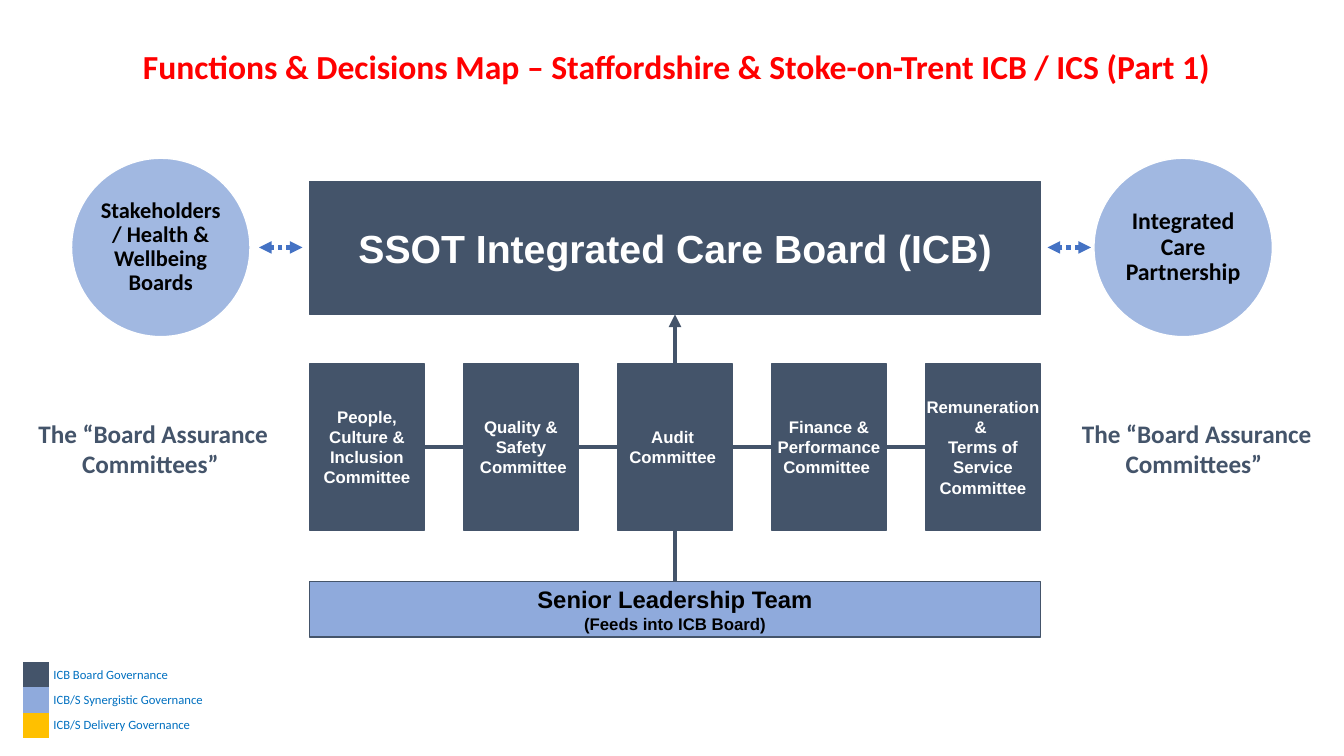
from lxml import etree
from pptx import Presentation
from pptx.dml.color import RGBColor
from pptx.enum.dml import MSO_LINE
from pptx.enum.shapes import MSO_CONNECTOR, MSO_SHAPE
from pptx.enum.text import MSO_ANCHOR, PP_ALIGN
from pptx.oxml.ns import qn
from pptx.util import Inches, Pt

RECT, OVAL = MSO_SHAPE.RECTANGLE, MSO_SHAPE.OVAL
STRAIGHT, DOTTED = MSO_CONNECTOR.STRAIGHT, MSO_LINE.ROUND_DOT
MIDDLE, CENTER, LEFT = MSO_ANCHOR.MIDDLE, PP_ALIGN.CENTER, PP_ALIGN.LEFT
TOP_SIDE, LEFT_SIDE, BOTTOM_SIDE, RIGHT_SIDE = range(4)

SLATE = RGBColor(0x44, 0x54, 0x6A)
BLUE = RGBColor(0x44, 0x72, 0xC4)
PALE_BLUE = RGBColor(0x8F, 0xAA, 0xDC)
AMBER = RGBColor(0xFF, 0xC0, 0x00)
RED = RGBColor(0xFF, 0x00, 0x00)
LEGEND_BLUE = RGBColor(0x00, 0x70, 0xC0)
WHITE = RGBColor(0xFF, 0xFF, 0xFF)
BLACK = RGBColor(0, 0, 0)

SLIDE_W, SLIDE_H = 13.33, 7.5

# Central column: board, committees and leadership team share these edges
COLUMN_X, COLUMN_W = 3.07, 7.25
COLUMN_MID = COLUMN_X + COLUMN_W / 2
BOARD_Y, BOARD_H = 1.8, 1.32
COMMITTEE_Y, COMMITTEE_W, COMMITTEE_H = 3.61, 1.14, 1.65
COMMITTEE_MID = COMMITTEE_Y + COMMITTEE_H / 2
TEAM_Y, TEAM_H = 5.77, 0.55

CIRCLE_D, CIRCLE_Y = 1.77, 1.57
PARTNER_MID = CIRCLE_Y + CIRCLE_D / 2
ARROW_W = 0.43
LABEL_Y, LABEL_W, LABEL_H = 4.09, 2.54, 0.71

COMMITTEES = [
    ["People, Culture & Inclusion Committee"],
    ["Quality & Safety", " Committee"],
    ["Audit ", "Committee "],
    ["Finance & Performance Committee "],
    ["Remuneration & ", "Terms of Service Committee"],
]
# Circle text, size, circle left, arrow left, label left
PARTNERS = [
    ("Stakeholders / Health & Wellbeing Boards", 16, 0.71, 2.57, 0.25),
    ("Integrated Care Partnership", 17, 10.85, 10.39, 10.6),
]
LEGEND = [
    (SLATE, "ICB Board Governance"),
    (PALE_BLUE, "ICB/S Synergistic Governance"),
    (AMBER, "ICB/S Delivery Governance"),
]


def write(frame, lines, sizes, color, font="Arial", bold=True, align=CENTER,
          spacing=None, insets=(0.04, 0.05)):
    """Fill a text frame with one paragraph per line; sizes match the lines."""
    frame.word_wrap = True
    frame.vertical_anchor = MIDDLE
    frame.margin_left = frame.margin_right = Inches(insets[0])
    frame.margin_top = frame.margin_bottom = Inches(insets[1])
    for number, (line, size) in enumerate(zip(lines, sizes)):
        paragraph = frame.paragraphs[0] if number == 0 else frame.add_paragraph()
        paragraph.alignment = align
        if spacing:
            paragraph.line_spacing = spacing
        run = paragraph.add_run()
        run.text = line
        run.font.name, run.font.size = font, Pt(size)
        run.font.bold, run.font.color.rgb = bold, color


def add_block(slide, kind, x, y, w, h, fill, outline):
    block = slide.shapes.add_shape(kind, *map(Inches, (x, y, w, h)))
    block.shadow.inherit = False
    block.fill.solid()
    block.fill.fore_color.rgb = fill
    block.line.color.rgb = outline
    block.line.width = Pt(1)
    return block


def add_label(slide, x, y, w, h, text, size, color, **text_format):
    label = slide.shapes.add_textbox(*map(Inches, (x, y, w, h)))
    write(label.text_frame, [text], [size], color, font="Calibri", **text_format)


def add_link(slide, x1, y1, x2, y2, color, arrow_ends=(), dash=None):
    """Draw a line; arrow_ends lists "headEnd" (start) and "tailEnd" (finish)."""
    link = slide.shapes.add_connector(STRAIGHT, *map(Inches, (x1, y1, x2, y2)))
    link.line.color.rgb = color
    link.line.width = Pt(3)
    if dash:
        link.line.dash_style = dash
    outline = link.line._get_or_add_ln()
    for end in arrow_ends:
        etree.SubElement(outline, qn(f"a:{end}"), type="triangle")
    etree.SubElement(link._element.spPr, qn("a:effectLst"))
    return link


def make_translucent(block, percent):
    color = block._element.spPr.find(f"{qn('a:solidFill')}/{qn('a:srgbClr')}")
    etree.SubElement(color, qn("a:alpha"), val=str(percent * 1000))


def add_governance(slide):
    """Draw the board, its committees and the leadership team, lines behind."""
    reporting = add_link(slide, COLUMN_MID, TEAM_Y, COLUMN_MID, BOARD_Y + BOARD_H,
                         SLATE, ["tailEnd"])
    chain = add_link(slide, COLUMN_X, COMMITTEE_MID, COLUMN_X + COLUMN_W,
                     COMMITTEE_MID, SLATE)

    board = add_block(slide, RECT, COLUMN_X, BOARD_Y, COLUMN_W, BOARD_H, SLATE, SLATE)
    write(board.text_frame, ["SSOT Integrated Care Board (ICB)"], [28], WHITE)

    pitch = (COLUMN_W - COMMITTEE_W) / (len(COMMITTEES) - 1)
    committees = []
    for column, lines in enumerate(COMMITTEES):
        committee = add_block(slide, RECT, COLUMN_X + column * pitch, COMMITTEE_Y,
                              COMMITTEE_W, COMMITTEE_H, SLATE, SLATE)
        is_last = column == len(COMMITTEES) - 1
        write(committee.text_frame, lines, [12] * len(lines), WHITE,
              insets=(0, 0.04) if is_last else (0.04, 0.05))
        committees.append(committee)

    team = add_block(slide, RECT, COLUMN_X, TEAM_Y, COLUMN_W, TEAM_H, PALE_BLUE, SLATE)
    write(team.text_frame, ["Senior Leadership Team", "(Feeds into ICB Board)"],
          [17, 12], BLACK, insets=(0, 0.04))

    reporting.begin_connect(team, TOP_SIDE)
    reporting.end_connect(board, BOTTOM_SIDE)
    chain.begin_connect(committees[0], LEFT_SIDE)
    chain.end_connect(committees[-1], RIGHT_SIDE)


def add_partner(slide, text, size, circle_x, arrow_x, label_x):
    """Draw one side: partner circle, two-way arrow and committee label."""
    circle = add_block(slide, OVAL, circle_x, CIRCLE_Y, CIRCLE_D, CIRCLE_D, BLUE, WHITE)
    make_translucent(circle, 50)
    write(circle.text_frame, [text], [size], BLACK, font="Calibri", spacing=0.9,
          insets=(0, 0))
    add_link(slide, arrow_x + ARROW_W, PARTNER_MID, arrow_x, PARTNER_MID, BLUE,
             ["headEnd", "tailEnd"], DOTTED)
    add_label(slide, label_x, LABEL_Y, LABEL_W, LABEL_H,
              "The “Board Assurance Committees” ", 18, SLATE, insets=(0.1, 0.05))


def add_legend(slide, x, y, swatch_w, text_w, row_h):
    frame = slide.shapes.add_table(
        len(LEGEND), 2, *map(Inches, (x, y, swatch_w + text_w, row_h * len(LEGEND))))
    table = frame.table
    table.first_row = table.horz_banding = False
    table.columns[0].width, table.columns[1].width = Inches(swatch_w), Inches(text_w)
    for row, (color, text) in enumerate(LEGEND):
        swatch, caption = table.cell(row, 0), table.cell(row, 1)
        swatch.fill.solid()
        swatch.fill.fore_color.rgb = color
        caption.fill.background()
        write(caption.text_frame, [text], [9], LEGEND_BLUE, font="Calibri",
              bold=False, align=LEFT)
        swatch.text_frame.paragraphs[0].font.size = Pt(9)
        for cell in (swatch, caption):
            cell.vertical_anchor = MIDDLE
            cell.margin_left = cell.margin_right = Inches(0.04)
            cell.margin_top = cell.margin_bottom = 0
            for side in ("lnL", "lnR", "lnT", "lnB"):
                border = etree.Element(qn(f"a:{side}"), w="0")
                etree.SubElement(border, qn("a:noFill"))
                properties = cell._tc.get_or_add_tcPr()
                properties.insert(len(properties) - 1, border)


def main():
    deck = Presentation()
    deck.slide_width, deck.slide_height = Inches(SLIDE_W), Inches(SLIDE_H)
    slide = deck.slides.add_slide(deck.slide_layouts[6])
    add_governance(slide)
    add_label(slide, 0.79, 0.47, 11.84, 0.43,
              "Functions & Decisions Map – Staffordshire & Stoke-on-Trent ICB / ICS (Part 1)",
              24, RED, spacing=0.9, insets=(0.04, 0.04))
    for partner in PARTNERS:
        add_partner(slide, *partner)
    add_legend(slide, 0.23, 6.57, 0.26, 1.58, 0.25)
    deck.save("out.pptx")


if __name__ == "__main__":
    main()
